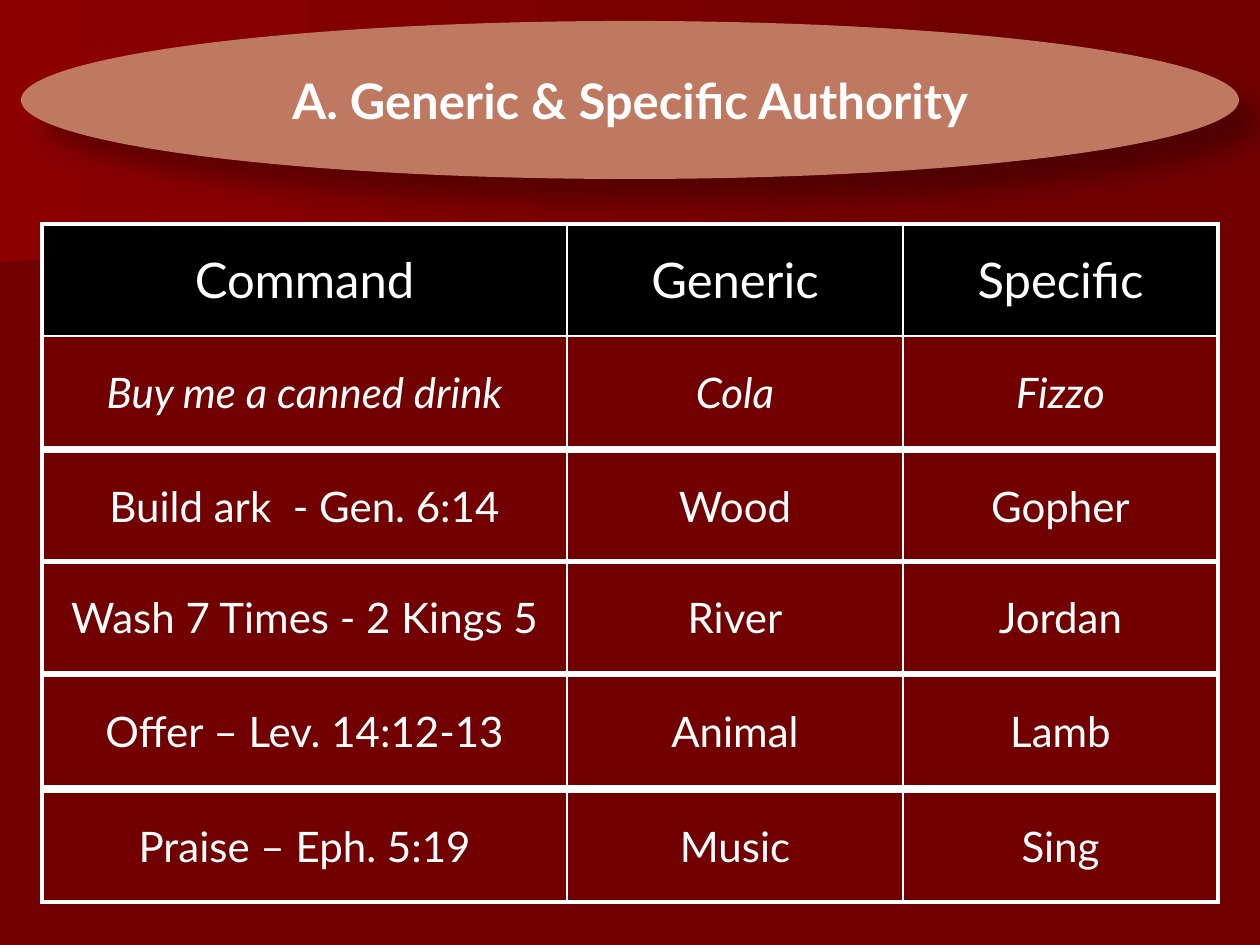
from lxml import etree
from pptx import Presentation
from pptx.dml.color import RGBColor
from pptx.enum import shapes, text
from pptx.oxml import ns
from pptx import util as u

SCALE = 914400 / 126
FONT = "Lato"
COLORS = {
    "background": "720000",
    "glow": "8C0000",
    "shade": "6F0000",
    "banner": "BE7960",
    "header": "000000",
    "shadow": "000000",
    "white": "FFFFFF",
}
BANDS = [
    ([(980, 193), (0, 273), (0, 127), (982, 127), (980, 161)], "shade"),
    ([(998, 204), (0, 262), (0, 0), (998, 0)], "glow"),
]
BANNER_BOX = (21, 21, 1218, 158)
TABLE_LEFT = 42
COLUMN_WIDTHS = (525, 336, 315)
OUTER_BORDER, INNER_BORDER = 2.25, 1
HEADER_FORMAT = {"size": u.Pt(28)}
EXAMPLE_FORMAT = {"size": u.Pt(24), "italic": True}
BODY_FORMAT = {"size": u.Pt(24)}
TABLES = [
    (224, 112, [
        (("Command", "Generic", "Specific"), HEADER_FORMAT, "header"),
        (("Buy me a canned drink", "Cola", "Fizzo"), EXAMPLE_FORMAT, None),
    ]),
    (451, 111, [(("Build ark  - Gen. 6:14", "Wood", "Gopher"), BODY_FORMAT, None)]),
    (561, 112, [(("Wash 7 Times - 2 Kings 5", "River", "Jordan"), BODY_FORMAT, None)]),
    (675, 112, [(("Offer – Lev. 14:12-13", "Animal", "Lamb"), BODY_FORMAT, None)]),
    (791, 111, [(("Praise – Eph. 5:19", "Music", "Sing"), BODY_FORMAT, None)]),
]


def px(length):
    """Turn a length in px into EMU."""
    return u.Emu(round(length * SCALE))


def color(name):
    """Look up a named colour."""
    return RGBColor.from_string(COLORS[name])


def set_attributes(target, values):
    """Set each named attribute of the target."""
    for name, value in values.items():
        setattr(target, name, value)


def add_element(parent, tag, **attributes):
    """Append a DrawingML element and return it."""
    return etree.SubElement(parent, ns.qn(f"a:{tag}"), attributes)


def write_text(frame, content, values):
    """Write one centred white paragraph."""
    paragraph = frame.paragraphs[0]
    paragraph.alignment = text.PP_ALIGN.CENTER
    run = paragraph.add_run()
    run.text = content
    set_attributes(run.font, {"name": FONT, **values})
    run.font.color.rgb = color("white")


def add_band(slide, points, start_color):
    """Draw a backdrop band that fades into the background."""
    builder = slide.shapes.build_freeform(*points[0], scale=SCALE)
    builder.add_line_segments(points[1:], close=True)
    shape = builder.convert_to_shape()
    shape.shadow.inherit = False
    shape.line.fill.background()
    shape.fill.gradient()
    shape.fill.gradient_angle = 0
    for stop, name in zip(shape.fill.gradient_stops, (start_color, "background")):
        stop.color.rgb = color(name)


def add_shadow(shape):
    """Give the shape a soft shadow toward the lower right."""
    shape.shadow.inherit = False
    effects = shape._element.spPr.find(ns.qn("a:effectLst"))
    shadow = add_element(effects, "outerShdw", blurRad=str(u.Pt(15)), dist=str(u.Pt(18)),
                         dir=str(45 * 60000), algn="ctr", rotWithShape="0")
    tint = add_element(shadow, "srgbClr", val=COLORS["shadow"])
    add_element(tint, "alpha", val="30000")


def add_banner(slide, content):
    """Draw the oval banner with the slide title on it."""
    box = [px(length) for length in BANNER_BOX]
    oval = slide.shapes.add_shape(shapes.MSO_SHAPE.OVAL, *box)
    oval.fill.solid()
    oval.fill.fore_color.rgb = color("banner")
    oval.line.fill.background()
    add_shadow(oval)

    title = slide.shapes.title
    set_attributes(title, dict(zip(("left", "top", "width", "height"), box)))
    set_attributes(title.text_frame, {
        "auto_size": text.MSO_AUTO_SIZE.NONE,
        "vertical_anchor": text.MSO_ANCHOR.MIDDLE,
        "word_wrap": False,
    })
    write_text(title.text_frame, content, {"size": u.Pt(28), "bold": True})
    oval._element.addnext(title._element)


def set_borders(cell, outer_sides):
    """Outline a cell, thicker on the table's outer sides."""
    properties = cell._tc.get_or_add_tcPr()
    for side, is_outer in outer_sides.items():
        width = OUTER_BORDER if is_outer else INNER_BORDER
        line = add_element(properties, f"ln{side}", w=str(u.Pt(width)))
        add_element(add_element(line, "solidFill"), "srgbClr", val=COLORS["white"])


def fill_cell(cell, fill_name):
    """Fill the cell, or leave it clear when no colour is named."""
    if fill_name:
        cell.fill.solid()
        cell.fill.fore_color.rgb = color(fill_name)
    else:
        cell.fill.background()


def add_table(slide, top, row_height, rows):
    """Add one framed table of commands."""
    table = slide.shapes.add_table(
        len(rows), len(COLUMN_WIDTHS), px(TABLE_LEFT), px(top),
        px(sum(COLUMN_WIDTHS)), px(row_height * len(rows))).table
    set_attributes(table, {"first_row": False, "horz_banding": False})
    for column, width in zip(table.columns, COLUMN_WIDTHS):
        column.width = px(width)
    for row_index, (labels, values, fill_name) in enumerate(rows):
        table.rows[row_index].height = px(row_height)
        for column_index, label in enumerate(labels):
            cell = table.cell(row_index, column_index)
            cell.vertical_anchor = text.MSO_ANCHOR.MIDDLE
            write_text(cell.text_frame, label, values)
            set_borders(cell, {
                "L": column_index == 0,
                "R": column_index == len(labels) - 1,
                "T": row_index == 0,
                "B": row_index == len(rows) - 1,
            })
            fill_cell(cell, fill_name)


def main():
    """Build and save the slide."""
    presentation = Presentation()
    set_attributes(presentation, {"slide_width": px(1260), "slide_height": px(945)})
    slide = presentation.slides.add_slide(presentation.slide_layouts[5])
    slide.background.fill.solid()
    slide.background.fill.fore_color.rgb = color("background")
    for points, start_color in BANDS:
        add_band(slide, points, start_color)
    add_banner(slide, "A. Generic & Specific Authority")
    for top, row_height, rows in TABLES:
        add_table(slide, top, row_height, rows)
    presentation.save("out.pptx")


if __name__ == "__main__":
    main()
